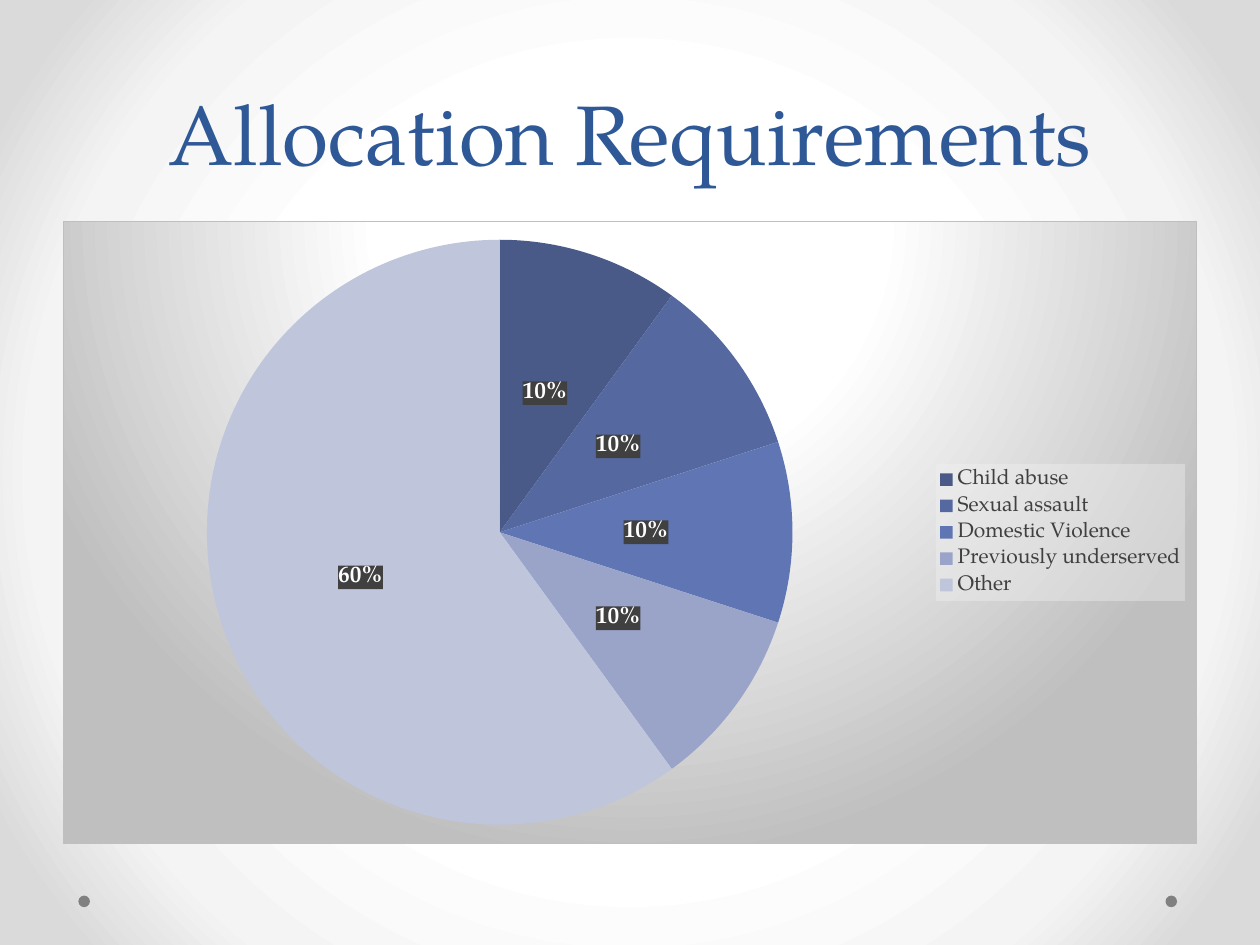
from pptx import Presentation
from pptx.chart.data import CategoryChartData
from pptx.dml.color import RGBColor
from pptx.enum.chart import XL_CHART_TYPE, XL_LABEL_POSITION, XL_LEGEND_POSITION
from pptx.enum.shapes import MSO_SHAPE
from pptx.enum.text import MSO_ANCHOR, PP_ALIGN
from pptx.oxml import parse_xml
from pptx.oxml.ns import nsdecls, qn
from pptx.util import Pt

TITLE = "Allocation Requirements"
FONT = "TeX Gyre Pagella"
# category, percent, slice colour
ALLOCATIONS = [
    ("Child abuse", 10, "495A89"),
    ("Sexual assault", 10, "5569A0"),
    ("Domestic Violence", 10, "6076B4"),
    ("Previously underserved", 10, "9AA4C9"),
    ("Other", 60, "BFC5DB"),
]
COLORS = {"title": "2F5897", "dot": "808080", "border": "BFBFBF", "text": "000000",
          "legend": "404040", "legend_fill": "F2F2F2", "label": "FFFFFF", "label_fill": "404040"}
PAGE_STOPS = [(50, "FFFFFF"), (76, "F4F4F4"), (92, "DADADA")]
CHART_STOPS = [(0, "FFFFFF"), (39, "FFFFFF"), (100, "BFBFBF")]


def rgb(name):
    return RGBColor.from_string(COLORS[name])


def set_font(font, size, color, bold=False):
    font.name, font.size, font.bold = FONT, Pt(size), bold
    font.color.rgb = rgb(color)


def radial_fill(stops, top, bottom):
    marks = "".join(f'<a:gs pos="{at * 1000}"><a:srgbClr val="{color}"/></a:gs>' for at, color in stops)
    return (f'<a:gradFill rotWithShape="1"><a:gsLst>{marks}</a:gsLst><a:path path="circle">'
            f'<a:fillToRect l="50000" t="{top * 1000}" r="50000" b="{bottom * 1000}"/>'
            '</a:path></a:gradFill>')


def clear_fill(name, opacity):
    return (f'<a:solidFill><a:srgbClr val="{COLORS[name]}">'
            f'<a:alpha val="{opacity * 1000}"/></a:srgbClr></a:solidFill>')


def chart_style(content):
    return parse_xml(f'<c:spPr {nsdecls("c", "a")}>{content}</c:spPr>')


def set_layout(parent, index, x, y, width, height, inner=False):
    for old in parent.findall(qn("c:layout")):
        parent.remove(old)
    target = '<c:layoutTarget val="inner"/>' if inner else ""
    parent.insert(index, parse_xml(
        f'<c:layout {nsdecls("c")}><c:manualLayout>{target}'
        '<c:xMode val="edge"/><c:yMode val="edge"/>'
        f'<c:x val="{x}"/><c:y val="{y}"/><c:w val="{width}"/><c:h val="{height}"/>'
        '</c:manualLayout></c:layout>'))


deck = Presentation()
deck.slide_width, deck.slide_height = Pt(720), Pt(540)
page = deck.slides.add_slide(deck.slide_layouts[5])

# Background
page.element.cSld.insert(0, parse_xml(
    f'<p:bg {nsdecls("p", "a")}><p:bgPr>{radial_fill(PAGE_STOPS, 50, 50)}'
    '<a:effectLst/></p:bgPr></p:bg>'))

# Corner dots
for left in (666, 44.8):
    dot = page.shapes.add_shape(MSO_SHAPE.OVAL, Pt(left), Pt(511.8), Pt(6.6), Pt(6.6))
    dot.shadow.inherit = False
    dot.fill.solid()
    dot.fill.fore_color.rgb = rgb("dot")
    dot.line.fill.background()

# Title
title = page.shapes.title
title.left, title.top, title.width, title.height = Pt(0), Pt(0), Pt(720), Pt(108)
title.text_frame.text = TITLE
title.text_frame.vertical_anchor = MSO_ANCHOR.BOTTOM
para = title.text_frame.paragraphs[0]
para.alignment, para.line_spacing = PP_ALIGN.CENTER, Pt(58)
set_font(para.font, 48, "title")

# Pie chart
data = CategoryChartData()
data.categories = [name for name, _, _ in ALLOCATIONS]
data.add_series("Series 1", [value for _, value, _ in ALLOCATIONS])
chart = page.shapes.add_chart(XL_CHART_TYPE.PIE, Pt(36), Pt(126), Pt(648), Pt(356.4), data).chart
chart.has_title = False
set_font(chart.font, 10, "text")
plot = chart.plots[0]
plot.vary_by_categories = True
for index, (_, _, color) in enumerate(ALLOCATIONS):
    fill = plot.series[0].points[index].format.fill
    fill.solid()
    fill.fore_color.rgb = RGBColor.from_string(color)

# Slice labels
plot.has_data_labels = True
labels = plot.data_labels
labels.show_percentage, labels.show_value = True, False
labels.number_format, labels.number_format_is_linked = "0%", False
labels.position = XL_LABEL_POSITION.CENTER
set_font(labels.font, 13.3, "label", bold=True)
label_text = chart.element.find(".//" + qn("c:dLbls")).find(qn("c:txPr"))
label_text.addprevious(chart_style(clear_fill("label_fill", 90)))

# Legend
chart.has_legend = True
chart.legend.position = XL_LEGEND_POSITION.RIGHT
chart.legend.include_in_layout = False
set_font(chart.legend.font, 12, "legend")
legend = chart.element.find(".//" + qn("c:legend"))
legend.find(qn("c:txPr")).addprevious(chart_style(clear_fill("legend_fill", 39)))
set_layout(legend, 1, 0.77, 0.39, 0.22, 0.22)

# Chart area
set_layout(chart.element.find(".//" + qn("c:plotArea")), 0, 0.12, 0.03, 0.53, 0.94, inner=True)
border = f'<a:ln w="9525"><a:solidFill><a:srgbClr val="{COLORS["border"]}"/></a:solidFill></a:ln>'
chart.element.find(qn("c:chart")).addnext(chart_style(radial_fill(CHART_STOPS, -80, 180) + border))

deck.save("out.pptx")
